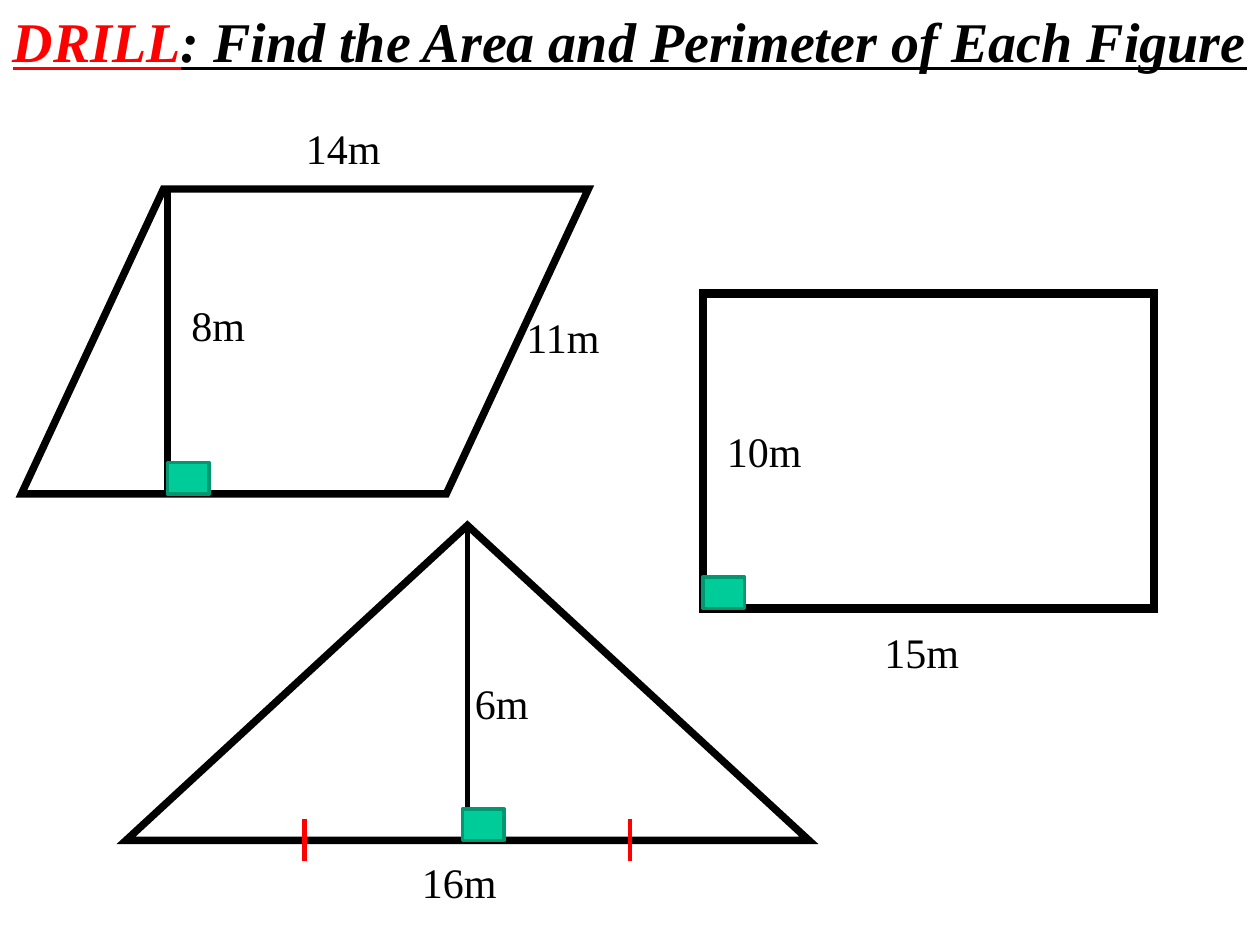
import dataclasses
import typing

import lxml.etree
import pptx
import pptx.dml.color
import pptx.enum.shapes
import pptx.enum.text
import pptx.oxml.ns
import pptx.util

Inches = pptx.util.Inches
Kind = pptx.enum.shapes.MSO_SHAPE
COLORS = {"black": "000000", "red": "FF0000", "green": "00CC99", "dark green": "009771"}
FONT = "Times New Roman"


@dataclasses.dataclass
class Figure:
    kind: Kind
    left: float
    top: float
    width: float
    height: float
    weight: float
    line: str = "black"
    fill: typing.Optional[str] = None
    slant: typing.Optional[float] = None


@dataclasses.dataclass
class Upright:
    x: float
    top: float
    bottom: float
    weight: float
    color: str = "black"


@dataclasses.dataclass
class Label:
    text: str
    left: float
    top: float


FIGURES = [
    Figure(Kind.PARALLELOGRAM, 0.17, 1.5, 4.5, 2.42, 4.25, slant=0.466),
    Figure(Kind.ISOSCELES_TRIANGLE, 1, 4.17, 5.42, 2.5, 4.25),
    Figure(Kind.RECTANGLE, 5.58, 2.33, 3.58, 2.5, 5),
]
HEIGHTS = [Upright(1.33, 1.5, 3.92, 4.25), Upright(3.71, 4.17, 6.67, 3)]
TICKS = [Upright(x, 6.5, 6.83, 2.75, "red") for x in (2.42, 5)]
RIGHT_ANGLES = [
    Figure(Kind.RECTANGLE, left, top, 0.33, 0.25, 2, "dark green", "green")
    for left, top in ((3.67, 6.42), (1.33, 3.67), (5.58, 4.58))
]
LABELS = [
    Label("8m", 1.42, 2.33),
    Label("10m", 5.67, 3.33),
    Label("14m", 2.33, 0.92),
    Label("16m", 3.25, 6.75),
    Label("15m", 6.92, 4.92),
    Label("6m", 3.67, 5.33),
    Label("11m", 4.08, 2.42),
]


def rgb(name: str) -> pptx.dml.color.RGBColor:
    return pptx.dml.color.RGBColor.from_string(COLORS[name])


def set_line(line, color: str, weight: float) -> None:
    line.color.rgb = rgb(color)
    line.width = pptx.util.Pt(weight)


def add_span(para, text: str, color: str = "black", **formats) -> None:
    span = para.add_run()
    span.text = text
    span.font.color.rgb = rgb(color)
    for name, value in {"name": FONT, **formats}.items():
        setattr(span.font, name, value)


def draw_figure(page, figure: Figure) -> None:
    shape = page.shapes.add_shape(
        figure.kind, Inches(figure.left), Inches(figure.top), Inches(figure.width), Inches(figure.height)
    )
    shape.shadow.inherit = False
    if figure.slant is not None:
        shape.adjustments[0] = figure.slant
    set_line(shape.line, figure.line, figure.weight)
    if figure.fill:
        shape.fill.solid()
        shape.fill.fore_color.rgb = rgb(figure.fill)
    else:
        shape.fill.background()
        outline = shape._element.spPr.find(pptx.oxml.ns.qn("a:ln"))
        lxml.etree.SubElement(outline, pptx.oxml.ns.qn("a:miter"), lim="800000")


def draw_upright(page, upright: Upright) -> None:
    x = Inches(upright.x)
    connector = page.shapes.add_connector(
        pptx.enum.shapes.MSO_CONNECTOR.STRAIGHT, x, Inches(upright.top), x, Inches(upright.bottom)
    )
    set_line(connector.line, upright.color, upright.weight)
    lxml.etree.SubElement(connector._element.spPr, pptx.oxml.ns.qn("a:effectLst"))


def draw_label(page, label: Label) -> None:
    box = page.shapes.add_textbox(Inches(label.left), Inches(label.top), Inches(1), Inches(0.51))
    box.text_frame.word_wrap = True
    add_span(box.text_frame.paragraphs[0], label.text, size=pptx.util.Pt(24))


def write_title(page) -> None:
    title = page.shapes.title
    place = {"left": 0, "top": 0, "width": 10, "height": 0.64}
    for name, value in place.items():
        setattr(title, name, Inches(value))
    frame_formats = {
        "word_wrap": True,
        "auto_size": pptx.enum.text.MSO_AUTO_SIZE.NONE,
        "vertical_anchor": pptx.enum.text.MSO_ANCHOR.TOP,
        "margin_right": 0,
    }
    for name, value in frame_formats.items():
        setattr(title.text_frame, name, value)
    para = title.text_frame.paragraphs[0]
    para.alignment = pptx.enum.text.PP_ALIGN.LEFT
    formats = {"size": pptx.util.Pt(32), "bold": True, "italic": True, "underline": True}
    add_span(para, "DRILL", "red", **formats)
    add_span(para, ": Find the Area and Perimeter of Each Figure", **formats)


def main() -> None:
    deck = pptx.Presentation()
    deck.slide_width, deck.slide_height = Inches(10), Inches(7.5)
    page = deck.slides.add_slide(deck.slide_layouts.get_by_name("Title Only"))
    write_title(page)
    for figure in FIGURES:
        draw_figure(page, figure)
    for upright in HEIGHTS + TICKS:
        draw_upright(page, upright)
    for corner in RIGHT_ANGLES:
        draw_figure(page, corner)
    for label in LABELS:
        draw_label(page, label)
    deck.save("out.pptx")


if __name__ == "__main__":
    main()
